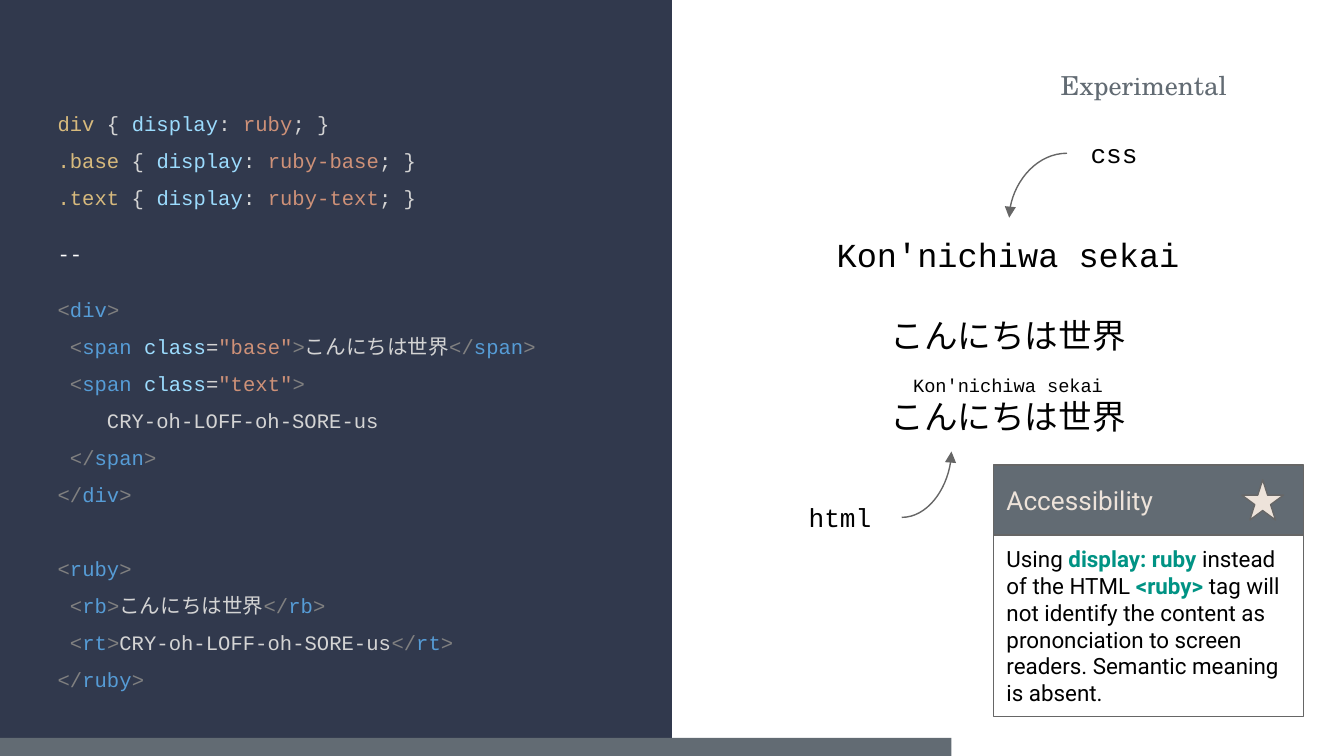
from lxml.etree import SubElement
from pptx import Presentation
from pptx.dml.color import RGBColor
from pptx.enum.shapes import MSO_CONNECTOR, MSO_SHAPE
from pptx.enum.text import MSO_ANCHOR, PP_ALIGN
from pptx.oxml.ns import qn
from pptx.util import Inches, Pt

# Theme, on a 16:9 slide
W = 10
H = W * 9 / 16
MONO, SANS, SERIF = "Courier New", "Roboto", "TeX Gyre Schola"
COLOR = dict(
    panel="31394D", slate="626B73", cream="EDE3DA", line="666666",
    black="000000", white="FFFFFF", accent="009384",
    selector="D7BA7D", plain="D4D4D4", attr="9CDCFE",
    value="CE9178", bracket="808080", tag="569CD6",
)
SIZE = dict(code=11, small=10, body=12, label=14, sample=18)


# Code syntax: each line is a list of (text, colour) tokens
def rule(selector, value):
    return [(selector, "selector"), (" { ", "plain"), ("display", "attr"),
            (": ", "plain"), (value, "value"), ("; }", "plain")]


def start(name, cls=None):
    if cls is None:
        return [("<", "bracket"), (name, "tag"), (">", "bracket")]
    return [("<", "bracket"), (name + " ", "tag"), ("class", "attr"),
            ("=", "plain"), (f'"{cls}"', "value"), (">", "bracket")]


def end(name):
    return [("</", "bracket"), (name, "tag"), (">", "bracket")]


def plain(text):
    return [(text, "plain")]


# Content
JAPANESE, ROMAN = "こんにちは世界", "Kon'nichiwa sekai"
SPOKEN = "CRY-oh-LOFF-oh-SORE-us"
INDENT = plain(" ")

# (tokens, space before in points)
CODE = [
    (rule("div", "ruby"), 0),
    (rule(".base", "ruby-base"), 0),
    (rule(".text", "ruby-text"), 0),
    ([("--", "white")], 10),
    (start("div"), 10),
    (INDENT + start("span", "base") + plain(JAPANESE) + end("span"), 0),
    (INDENT + start("span", "text"), 0),
    (plain("    " + SPOKEN), 0),
    (INDENT + end("span"), 0),
    (end("div"), 0),
    (start("ruby"), 19.8),
    (INDENT + start("rb") + plain(JAPANESE) + end("rb"), 0),
    (INDENT + start("rt") + plain(SPOKEN) + end("rt"), 0),
    (end("ruby"), 0),
]
# (text, font, size, line spacing, space before)
SAMPLES = [
    (ROMAN, MONO, "sample", 1, 0),
    (JAPANESE, SANS, "sample", 2, 0),
    (ROMAN, MONO, "small", 1, 10),
    (JAPANESE, SANS, "sample", 1, 0),
]
# (text, box, alignment, anchor, font, colour)
LABELS = [
    ("css", (7.94, 0.95, 0.7, 0.38), PP_ALIGN.CENTER, MSO_ANCHOR.MIDDLE, MONO, "black"),
    ("html", (5.79, 3.66, 0.92, 0.38), PP_ALIGN.CENTER, MSO_ANCHOR.MIDDLE, MONO, "black"),
    ("Experimental", (7.66, 0.42, 1.57, 0.33), PP_ALIGN.RIGHT, MSO_ANCHOR.TOP, SERIF, "slate"),
]
ARROWS = [(7.94, 1.14, 7.51, 1.62), (6.71, 3.85, 7.08, 3.36)]
NOTE = [
    ("Using ", "black"), ("display: ruby", "accent"),
    (" instead of the HTML ", "black"), ("<ruby>", "accent"),
    (" tag will not identify the content as prononciation to screen readers. "
     "Semantic meaning is absent.", "black"),
]


# Helpers
def rgb(name):
    return RGBColor.from_string(COLOR[name])


def frame(sp, anchor=MSO_ANCHOR.MIDDLE):
    tf = sp.text_frame
    settings = dict(word_wrap=True, vertical_anchor=anchor, margin_left=Inches(0.1),
                    margin_right=Inches(0.1), margin_top=Inches(0.1),
                    margin_bottom=Inches(0.1))
    for name, value in settings.items():
        setattr(tf, name, value)
    return tf


def write(p, tokens, font, size, align=PP_ALIGN.LEFT, spacing=1, before=0):
    settings = dict(alignment=align, line_spacing=spacing, space_before=Pt(before))
    for name, value in settings.items():
        setattr(p, name, value)
    for text, color in tokens:
        r = p.add_run()
        r.text = text
        for name, value in dict(name=font, size=Pt(SIZE[size]),
                                bold=color == "accent").items():
            setattr(r.font, name, value)
        r.font.color.rgb = rgb(color)


def textbox(box, anchor=MSO_ANCHOR.MIDDLE):
    return frame(s.shapes.add_textbox(*map(Inches, box)), anchor)


def paragraphs(tf, count):
    return [tf.paragraphs[0]] + [tf.add_paragraph() for _ in range(count - 1)]


def shape(kind, box, fill=None, line=None):
    sp = s.shapes.add_shape(kind, *map(Inches, box))
    sp.shadow.inherit = False
    if fill:
        sp.fill.solid()
        sp.fill.fore_color.rgb = rgb(fill)
    else:
        sp.fill.background()
    if line:
        sp.line.color.rgb = rgb(line)
        sp.line.width = Pt(0.75)
    else:
        sp.line.fill.background()
    return sp


def curved_arrow(x1, y1, x2, y2):
    c = s.shapes.add_connector(MSO_CONNECTOR.CURVE, *map(Inches, (x1, y1, x2, y2)))
    c.line.color.rgb = rgb("line")
    c.line.width = Pt(0.75)
    pr = c._element.spPr
    pr.find(qn("a:prstGeom")).set("prst", "curvedConnector2")
    SubElement(pr.find(qn("a:ln")), qn("a:tailEnd"), type="triangle")
    SubElement(pr, qn("a:effectLst"))


prs = Presentation()
prs.slide_width, prs.slide_height = Inches(W), Inches(H)
s = prs.slides.add_slide(prs.slide_layouts[6])

# Dark half with the code
shape(MSO_SHAPE.RECTANGLE, (0, 0, W / 2, H), "panel")
tf = textbox((0.33, 0.55, 4.05, 4.78))
for p, (tokens, before) in zip(paragraphs(tf, len(CODE)), CODE):
    write(p, tokens, MONO, "code", spacing=1.5, before=before)

# Rendered samples
tf = textbox((5.34, 0.95, 4.32, 3.09))
for p, (text, font, size, spacing, before) in zip(paragraphs(tf, len(SAMPLES)), SAMPLES):
    write(p, [(text, "black")], font, size, PP_ALIGN.CENTER, spacing, before)

# Labels and their arrows
for text, box, align, anchor, font, color in LABELS:
    write(textbox(box, anchor).paragraphs[0], [(text, color)], font, "label", align)
for ends in ARROWS:
    curved_arrow(*ends)

# Accessibility card
left, top, width, head, body = 7.39, 3.46, 2.31, 0.52, 1.35
sp = shape(MSO_SHAPE.RECTANGLE, (left, top, width, head), "slate", "line")
write(frame(sp).paragraphs[0], [("Accessibility", "cream")], SANS, "label")
sp = shape(MSO_SHAPE.RECTANGLE, (left, top + head, width, body), line="line")
write(frame(sp).paragraphs[0], NOTE, SANS, "body")
shape(MSO_SHAPE.STAR_5_POINT, (9.24, 3.57, 0.31, 0.3), "cream", "line")

# Footer bar
shape(MSO_SHAPE.RECTANGLE, (0, 5.49, 7.08, H - 5.49), "slate")

prs.save("out.pptx")
